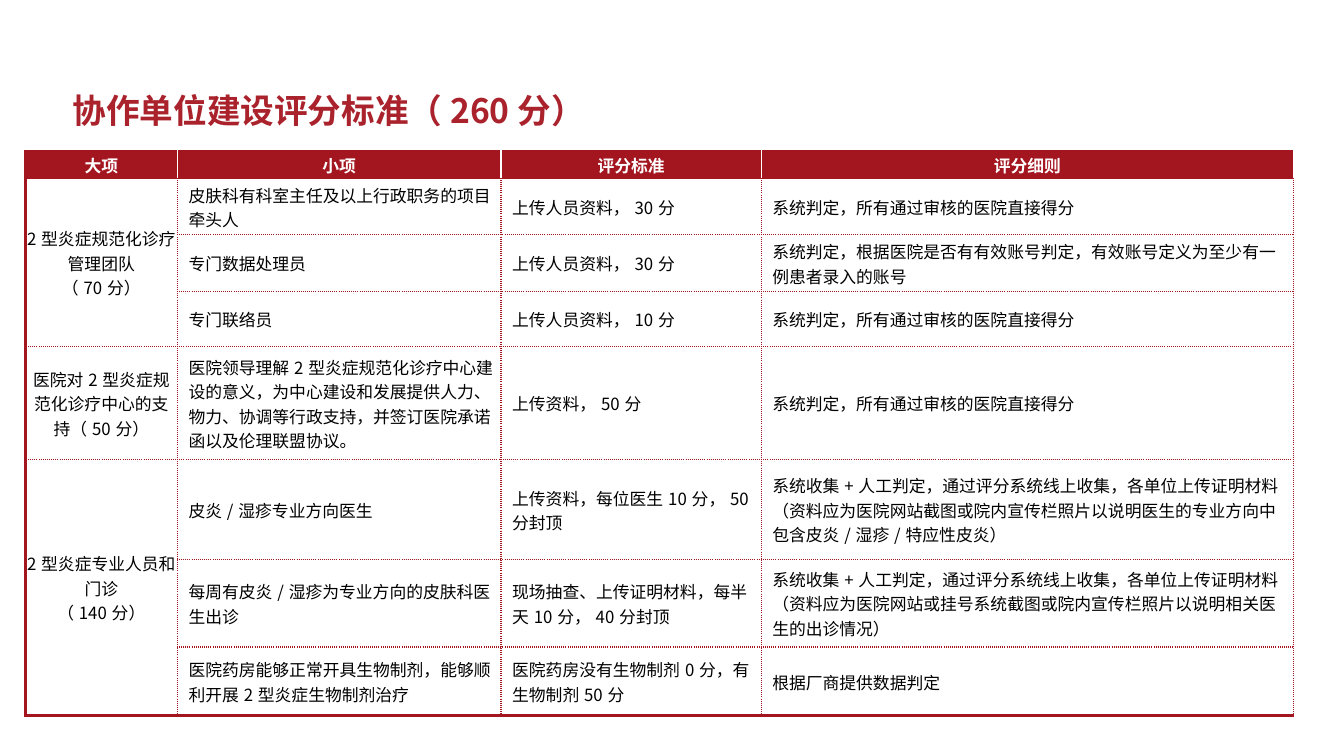
from typing import NamedTuple

from lxml.etree import SubElement
from pptx import Presentation
from pptx.dml.color import RGBColor
from pptx.enum.text import MSO_ANCHOR, PP_ALIGN
from pptx.oxml.ns import qn
from pptx.util import Inches, Pt

WHITE = RGBColor(0xFF, 0xFF, 0xFF)
BLACK = RGBColor(0, 0, 0)
RED = RGBColor(0xA3, 0x16, 0x20)
TITLE_RED = RGBColor(0xA9, 0x22, 0x2C)
FONT = "Noto Sans CJK SC"

WIDTH, HEIGHT = Inches(13.33), Inches(7.5)
GRID_COLS, GRID_ROWS = 1333, 750
COL_SPANS = [151, 321, 258, 528]
ROW_SPANS = [27, 56, 56, 55, 112, 99, 87, 68]


class Line(NamedTuple):
    color: RGBColor
    width: float
    dash: str = "solid"


class Item(NamedTuple):
    name: str
    standard: str
    rule: str


class Group(NamedTuple):
    title: str
    items: list[Item]


THICK = Line(RED, 2.25)
SOLID = Line(RED, 1)
DOTTED = Line(RED, 1, "sysDot")
DIVIDER = Line(WHITE, 1)

HEADERS = ["大项", "小项", "评分标准", "评分细则"]
DIRECT = "系统判定，所有通过审核的医院直接得分"
GROUPS = [
    Group("2型炎症规范化诊疗管理团队\n（70分）", [
        Item("皮肤科有科室主任及以上行政职务的项目牵头人", "上传人员资料，30分", DIRECT),
        Item("专门数据处理员", "上传人员资料，30分",
             "系统判定，根据医院是否有有效账号判定，有效账号定义为至少有一例患者录入的账号"),
        Item("专门联络员", "上传人员资料，10分", DIRECT),
    ]),
    Group("医院对2型炎症规范化诊疗中心的支持（50分）", [
        Item("医院领导理解2型炎症规范化诊疗中心建设的意义，为中心建设和发展提供人力、"
             "物力、协调等行政支持，并签订医院承诺函以及伦理联盟协议。",
             "上传资料，50分", DIRECT),
    ]),
    Group("2型炎症专业人员和门诊\n（140分）", [
        Item("皮炎/湿疹专业方向医生", "上传资料，每位医生10分，50分封顶",
             "系统收集+人工判定，通过评分系统线上收集，各单位上传证明材料"
             "（资料应为医院网站截图或院内宣传栏照片以说明医生的专业方向中包含皮炎/湿疹/特应性皮炎）"),
        Item("每周有皮炎/湿疹为专业方向的皮肤科医生出诊",
             "现场抽查、上传证明材料，每半天10分，40分封顶",
             "系统收集+人工判定，通过评分系统线上收集，各单位上传证明材料"
             "（资料应为医院网站或挂号系统截图或院内宣传栏照片以说明相关医生的出诊情况）"),
        Item("医院药房能够正常开具生物制剂，能够顺利开展2型炎症生物制剂治疗",
             "医院药房没有生物制剂0分，有生物制剂50分", "根据厂商提供数据判定"),
    ]),
]


def across(cols: float) -> int:
    return round(WIDTH * cols / GRID_COLS)


def down(rows: float) -> int:
    return round(HEIGHT * rows / GRID_ROWS)


def write(tf, text: str, *, size: float = 12, color: RGBColor = BLACK,
          bold: bool = False, align=PP_ALIGN.LEFT, indent: int = 0) -> None:
    for i, line in enumerate(text.split("\n")):
        p = tf.add_paragraph() if i else tf.paragraphs[0]
        p.alignment = align
        pPr = p._p.get_or_add_pPr()
        pPr.set("marL", str(indent))
        pPr.set("indent", "0")
        r = p.add_run()
        r.text = line
        r.font.size, r.font.bold, r.font.name = Pt(size), bold, FONT
        r.font.color.rgb = color
        SubElement(r._r.get_or_add_rPr(), qn("a:ea"), typeface=FONT)


def set_borders(cell, **sides: Line) -> None:
    tcPr = cell._tc.get_or_add_tcPr()
    for side, line in sides.items():
        ln = SubElement(tcPr, qn(f"a:ln{side}"), w=str(Pt(line.width)))
        fill = SubElement(ln, qn("a:solidFill"))
        SubElement(fill, qn("a:srgbClr"), val=str(line.color))
        SubElement(ln, qn("a:prstDash"), val=line.dash)


def format_cell(cell, row: int, col: int) -> None:
    header = row == 0
    inner = DIVIDER if header else DOTTED
    last = row + max(cell.span_height, 1) == len(ROW_SPANS)
    set_borders(
        cell,
        L=inner if col else THICK,
        R=inner,
        T=THICK if header else SOLID if row == 1 else DOTTED,
        B=SOLID if header else THICK if last else DOTTED,
    )
    cell.fill.solid()
    cell.fill.fore_color.rgb = RED if header else WHITE
    cell.vertical_anchor = MSO_ANCHOR.MIDDLE
    cell.margin_left = cell.margin_right = across(1)
    cell.margin_top, cell.margin_bottom = down(1), 0


def add_title(s, text: str) -> None:
    sp = s.shapes.title
    sp.left, sp.top, sp.width, sp.height = across(72), down(89), across(781), down(40)
    tf = sp.text_frame
    tf.margin_left = tf.margin_right = tf.margin_top = tf.margin_bottom = 0
    tf.vertical_anchor = MSO_ANCHOR.MIDDLE
    write(tf, text, size=24, color=TITLE_RED, bold=True)


def add_score_table(s) -> None:
    table = s.shapes.add_table(len(ROW_SPANS), len(COL_SPANS), across(25), down(150),
                               across(sum(COL_SPANS)), down(sum(ROW_SPANS))).table
    for column, span in zip(table.columns, COL_SPANS):
        column.width = across(span)
    for table_row, span in zip(table.rows, ROW_SPANS):
        table_row.height = down(span)

    for col, text in enumerate(HEADERS):
        write(table.cell(0, col).text_frame, text, color=WHITE, bold=True,
              align=PP_ALIGN.CENTER)
    row = 1
    for group in GROUPS:
        first = table.cell(row, 0)
        if len(group.items) > 1:
            first.merge(table.cell(row + len(group.items) - 1, 0))
        write(first.text_frame, group.title, align=PP_ALIGN.CENTER)
        for item in group.items:
            for col, text in enumerate(item, 1):
                write(table.cell(row, col).text_frame, text, indent=across(10))
            row += 1

    for row in range(len(ROW_SPANS)):
        for col in range(len(COL_SPANS)):
            format_cell(table.cell(row, col), row, col)


def main() -> None:
    prs = Presentation()
    prs.slide_width, prs.slide_height = WIDTH, HEIGHT
    s = prs.slides.add_slide(prs.slide_layouts[5])
    add_title(s, "协作单位建设评分标准（260分）")
    add_score_table(s)
    prs.save("out.pptx")


if __name__ == "__main__":
    main()
